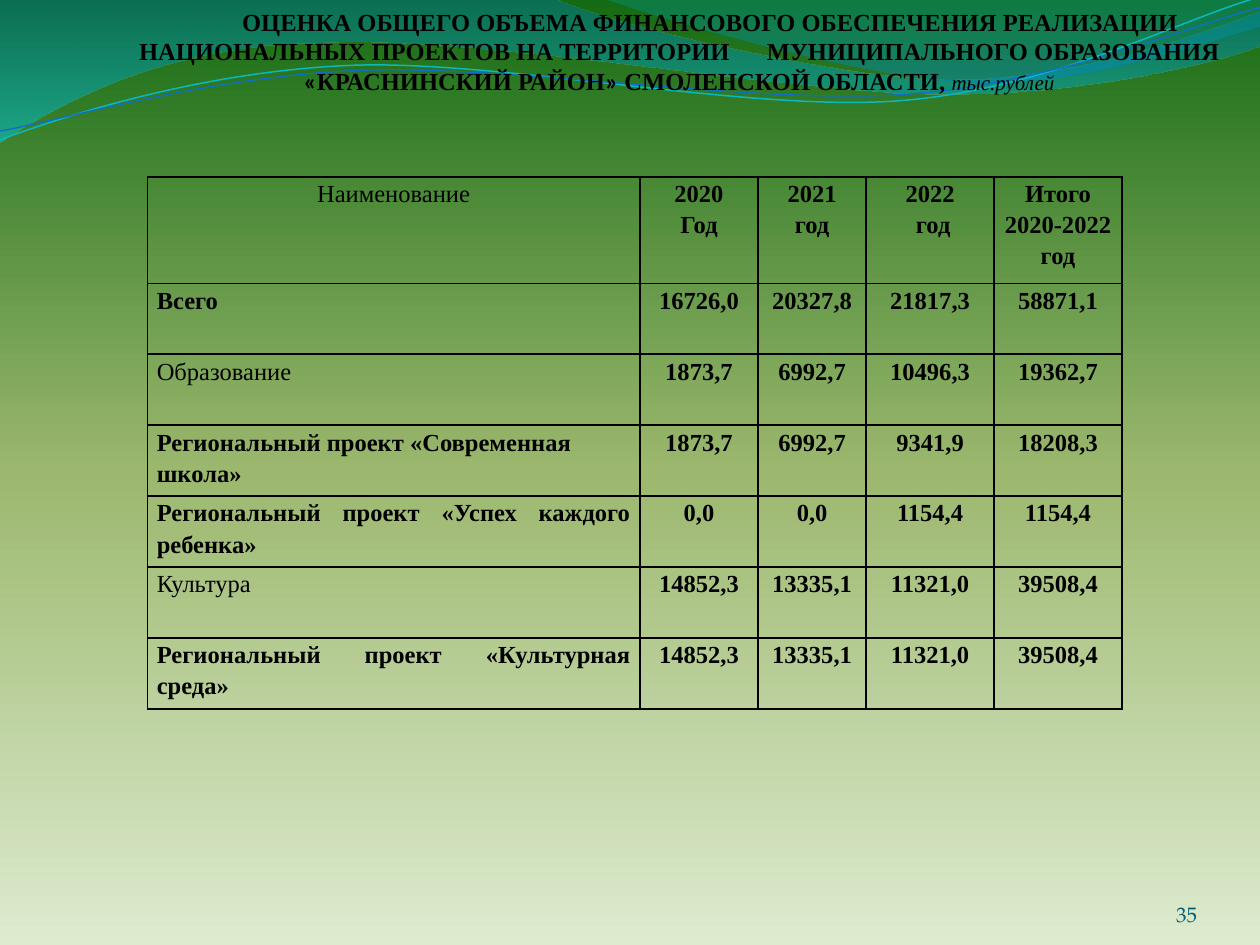
"""Build the slide on funding of national projects in the district."""
import math

from lxml import etree
from pptx import Presentation
from pptx import util as u
from pptx.dml.color import RGBColor
from pptx.enum import text as t
from pptx.oxml.ns import qn

THEME = {
    "serif": "Times New Roman", "sans": "Calibri", "number_font": "TeX Gyre Pagella",
    "ink": "000000", "number_ink": "045D75",
    "size": 14, "small": 12, "border": 1, "table_spacing": 1.15,
    "background": [(0, "DDEBCF", 100), (50, "9CB86E", 100), (100, "156B13", 100)],
    "large_wave": [(0, "0074A1", 45), (100, "00C6CF", 55)],
    "small_wave": [(0, "00A1A9", 30), (80, "008BBF", 45)],
    "cyan_line": ("0AB8BF", 0.85), "blue_line": ("0F6FC6", 0.75),
}

TITLE = [
    ("ОЦЕНКА ОБЩЕГО ОБЪЕМА ФИНАНСОВОГО ОБЕСПЕЧЕНИЯ РЕАЛИЗАЦИИ "
     "НАЦИОНАЛЬНЫХ ПРОЕКТОВ НА ТЕРРИТОРИИ", {}),
    (" ", {"tracking": 17.5}),
    ("МУНИЦИПАЛЬНОГО ОБРАЗОВАНИЯ ", {}),
    ("«", {"font": THEME["sans"]}),
    ("КРАСНИНСКИЙ РАЙОН", {}),
    ("»", {"font": THEME["sans"]}),
    (" СМОЛЕНСКОЙ ОБЛАСТИ, ", {}),
    ("тыс.рублей", {"size": THEME["small"], "bold": False, "italic": True}),
]
HEADER = ["Наименование", "2020\nГод", "2021 год", "2022\n год", "Итого 2020-2022 год"]
ROWS = [
    ["Всего", "16726,0", "20327,8", "21817,3", "58871,1"],
    ["Образование", "1873,7", "6992,7", "10496,3", "19362,7"],
    ["Региональный проект «Современная школа»", "1873,7", "6992,7", "9341,9", "18208,3"],
    ["Региональный проект «Успех каждого ребенка»", "0,0", "0,0", "1154,4", "1154,4"],
    ["Культура", "14852,3", "13335,1", "11321,0", "39508,4"],
    ["Региональный проект «Культурная среда»", "14852,3", "13335,1", "11321,0", "39508,4"],
]
REGULAR = {"Наименование", "Образование", "Культура"}
LEFT_ALIGNED = {"Региональный проект «Современная школа»"}
COLUMN_WIDTHS = [281.5, 67.5, 61.8, 73.1, 73.1]
HEADER_HEIGHT, ROW_HEIGHT = 60.8, 40.55

LARGE_WAVE = [
    [(0, -0.7)], [(316.8, -0.7)],
    [(342.7, 12.2), (478.1, 45.4), (545.8, 45.4)],
    [(614.2, 45.4), (689.8, 18.7), (720, 6.5)],
    [(720.7, 25.9)],
    [(707.8, 31.7), (626.4, 54.7), (537.1, 54)],
    [(447.8, 53.3), (275, 20.2), (185, 24.5)],
    [(92.9, 25.2), (33.1, 59.8), (-0.7, 81.4)],
    [(0, -0.7)],
]
SMALL_WAVE = [
    [(344.9, -0.7)],
    [(366.5, 7.9), (491, 44.6), (553.7, 46.8)],
    [(616.3, 49.7), (691.9, 23), (720, 15.1)],
    [(720, 0)], [(344.9, -0.7)],
]
CYAN_LINE = [
    [(0, 79.9)],
    [(34.6, 67), (113.8, 41), (199.4, 37.4)],
    [(284.4, 33.8), (427, 64.1), (513.4, 57.6)],
    [(599.8, 51.1), (675.4, 10.8), (718.6, -1.4)],
]
BLUE_LINE = [
    [(0, 74.9)],
    [(33.8, 69.1), (118.1, 43.9), (203.8, 40.3)],
    [(290.2, 36.7), (429.8, 59.8), (516.2, 54)],
    [(601.9, 48.2), (677.5, 15.1), (720, 4.3)],
]
LINE_TILT = -2.7
CYAN_CENTER, BLUE_CENTER = (359.3, 41.4), (359.6, 42.5)


def add_text(paragraph, content, font=THEME["serif"], size=THEME["size"],
             color=THEME["ink"], bold=True, italic=False, tracking=0):
    run = paragraph.add_run()
    run.text = content
    run.font.name, run.font.size = font, u.Pt(size)
    run.font.bold, run.font.italic = bold, italic
    run.font.color.rgb = RGBColor.from_string(color)
    if tracking:
        run.font._element.set("spc", str(int(tracking * 100)))


def add_color(parent, color, opacity=100):
    node = etree.SubElement(parent, qn("a:srgbClr"), val=color)
    if opacity < 100:
        etree.SubElement(node, qn("a:alpha"), val=str(opacity * 1000))


def paint_gradient(owner, fill, stops, angle):
    fill.gradient()
    gradient = next(owner.iter(qn("a:gradFill")))
    stop_list = gradient.find(qn("a:gsLst"))
    for stop in list(stop_list):
        stop_list.remove(stop)
    for position, color, opacity in stops:
        add_color(etree.SubElement(stop_list, qn("a:gs"), pos=str(position * 1000)), color, opacity)
    gradient.find(qn("a:lin")).set("ang", str(angle * 60000))


def rotate(point, center, degrees):
    x, y = point[0] - center[0], point[1] - center[1]
    cosine, sine = math.cos(math.radians(degrees)), math.sin(math.radians(degrees))
    return center[0] + x * cosine - y * sine, center[1] + x * sine + y * cosine


def add_curve(slide, segments, closed, center=(0, 0), tilt=0):
    points = [rotate(point, center, -tilt) for segment in segments for point in segment]
    start, *others = [(u.Pt(x), u.Pt(y)) for x, y in points]
    builder = slide.shapes.build_freeform(*start, scale=1.0)
    builder.add_line_segments(others, close=closed)
    shape = builder.convert_to_shape()
    shape.shadow.inherit = False
    shape.rotation = tilt % 360
    lines = iter(list(shape.element.iter(qn("a:lnTo"))))
    for segment in segments[1:]:
        first, *rest = [next(lines) for _ in segment]
        if rest:
            curve = etree.Element(qn("a:cubicBezTo"))
            first.addprevious(curve)
            for line in (first, *rest):
                curve.append(line[0])
                line.getparent().remove(line)
    return shape


def add_waves(slide):
    for segments, stops in ((LARGE_WAVE, THEME["large_wave"]), (SMALL_WAVE, THEME["small_wave"])):
        shape = add_curve(slide, segments, True)
        shape.line.fill.background()
        paint_gradient(shape.element, shape.fill, stops, 90)
    for segments, center, (color, width) in ((CYAN_LINE, CYAN_CENTER, THEME["cyan_line"]),
                                             (BLUE_LINE, BLUE_CENTER, THEME["blue_line"])):
        shape = add_curve(slide, segments, False, center, LINE_TILT)
        shape.fill.background()
        shape.line.color.rgb = RGBColor.from_string(color)
        shape.line.width = u.Pt(width)


def fill_cell(cell, content, alignment):
    cell.margin_left = cell.margin_right = u.Pt(5.4)
    cell.margin_top = cell.margin_bottom = 0
    cell.fill.background()
    properties = cell._tc.get_or_add_tcPr()
    for index, side in enumerate(("lnL", "lnR", "lnT", "lnB")):
        border = etree.Element(qn("a:" + side), w=str(u.Pt(THEME["border"])))
        add_color(etree.SubElement(border, qn("a:solidFill")), THEME["ink"])
        properties.insert(index, border)
    frame = cell.text_frame
    for index, line in enumerate(content.split("\n")):
        paragraph = frame.add_paragraph() if index else frame.paragraphs[0]
        paragraph.alignment = alignment
        paragraph.line_spacing = THEME["table_spacing"]
        add_text(paragraph, line, bold=content not in REGULAR)


def add_funding_table(slide):
    rows = [HEADER, *ROWS]
    heights = [HEADER_HEIGHT] + [ROW_HEIGHT] * len(ROWS)
    table = slide.shapes.add_table(len(rows), len(HEADER), u.Pt(84.2), u.Pt(101.1),
                                   u.Pt(sum(COLUMN_WIDTHS)), u.Pt(sum(heights))).table
    table.first_row = table.horz_banding = False
    for column, width in zip(table.columns, COLUMN_WIDTHS):
        column.width = u.Pt(width)
    for r, (values, height) in enumerate(zip(rows, heights)):
        table.rows[r].height = u.Pt(height)
        for c, value in enumerate(values):
            alignment = t.PP_ALIGN.JUSTIFY if r and not c else t.PP_ALIGN.CENTER
            if value in LEFT_ALIGNED:
                alignment = t.PP_ALIGN.LEFT
            fill_cell(table.cell(r, c), value, alignment)


def add_page_number(slide):
    frame = slide.shapes.add_textbox(u.Pt(624), u.Pt(500.5), u.Pt(60), u.Pt(28.8)).text_frame
    frame.word_wrap, frame.vertical_anchor = True, t.MSO_ANCHOR.BOTTOM
    frame.margin_left = frame.margin_right = frame.margin_top = frame.margin_bottom = 0
    frame.paragraphs[0].alignment = t.PP_ALIGN.RIGHT
    add_text(frame.paragraphs[0], "35", font=THEME["number_font"], size=THEME["small"],
             color=THEME["number_ink"], bold=False)


def place_title(slide):
    title = slide.shapes.title
    title.left, title.top, title.width, title.height = map(u.Pt, (56.2, 0, 663.8, 88.6))
    frame = title.text_frame
    frame.auto_size, frame.word_wrap = t.MSO_AUTO_SIZE.NONE, True
    frame.vertical_anchor, frame.margin_top = t.MSO_ANCHOR.TOP, u.Pt(4)
    paragraph = frame.paragraphs[0]
    paragraph.alignment = t.PP_ALIGN.CENTER
    paragraph._p.get_or_add_pPr().set("indent", str(u.Pt(35.4)))
    for content, style in TITLE:
        add_text(paragraph, content, **style)
    title.element.getparent().append(title.element)


def main():
    presentation = Presentation()
    presentation.slide_width, presentation.slide_height = u.Pt(720), u.Pt(540)
    slide = presentation.slides.add_slide(presentation.slide_layouts[5])
    paint_gradient(slide.element, slide.background.fill, THEME["background"], 270)
    add_waves(slide)
    add_page_number(slide)
    add_funding_table(slide)
    place_title(slide)
    presentation.save("out.pptx")


if __name__ == "__main__":
    main()
